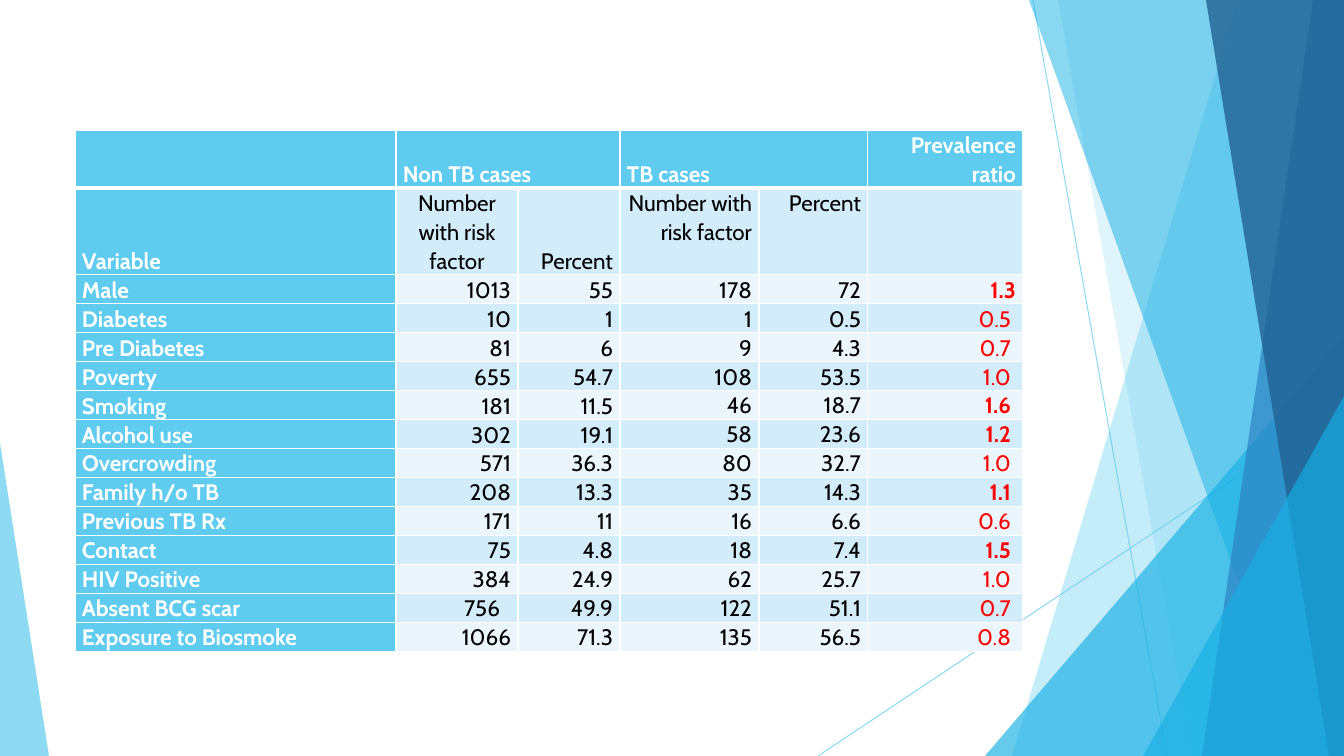
"""Build the slide with the table of TB risk factors and prevalence ratios."""
import pptx
import pptx.dml.color
import pptx.enum.shapes
import pptx.enum.text
import pptx.oxml
import pptx.oxml.ns
import pptx.util

RGBColor = pptx.dml.color.RGBColor
WHITE = RGBColor(0xFF, 0xFF, 0xFF)
BLACK = RGBColor(0x00, 0x00, 0x00)
RED = RGBColor(0xFF, 0x00, 0x00)
SKY = RGBColor(0x5F, 0xCB, 0xEF)
CYAN = RGBColor(0x17, 0xB0, 0xE4)
BLUE = RGBColor(0x2E, 0x83, 0xC3)
NAVY = RGBColor(0x22, 0x62, 0x92)
BAND_DARK = RGBColor(0xD2, 0xEC, 0xF9)
BAND_LIGHT = RGBColor(0xEA, 0xF6, 0xFC)

SCALE = 914400 / 100.8
WIDTH, HEIGHT = 1344, 756
FONT = "Cabin"
LEFT = pptx.enum.text.PP_ALIGN.LEFT
CENTER = pptx.enum.text.PP_ALIGN.CENTER
RIGHT = pptx.enum.text.PP_ALIGN.RIGHT
TOP = pptx.enum.text.MSO_ANCHOR.TOP
BOTTOM = pptx.enum.text.MSO_ANCHOR.BOTTOM

COLUMNS = [321, 122, 102, 139, 109, 155]
HEADER_HEIGHT, SUBHEADER_HEIGHT, ROW_HEIGHT = 57, 86, 28
HEADERS = ["", "Non TB cases", "", "TB cases", "", "Prevalence ratio"]
SUBHEADERS = ["Variable", "Number with risk factor", "Percent",
              "Number with risk factor", "Percent", ""]
ROWS = [
    ["Male", "1013", "55", "178", "72", "1.3"],
    ["Diabetes", "10", "1", "1", "0.5", "0.5"],
    ["Pre Diabetes", "81", "6", "9", "4.3", "0.7"],
    ["Poverty", "655", "54.7", "108", "53.5", "1.0"],
    ["Smoking", "181", "11.5", "46", "18.7", "1.6"],
    ["Alcohol use", "302", "19.1", "58", "23.6", "1.2"],
    ["Overcrowding", "571", "36.3", "80", "32.7", "1.0"],
    ["Family h/o TB", "208", "13.3", "35", "14.3", "1.1"],
    ["Previous TB Rx", "171", "11", "16", "6.6", "0.6"],
    ["Contact", "75", "4.8", "18", "7.4", "1.5"],
    ["HIV Positive", "384", "24.9", "62", "25.7", "1.0"],
    ["Absent BCG scar", "756", "49.9", "122", "51.1", "0.7"],
    ["Exposure to Biosmoke", "1066", "71.3", "135", "56.5", "0.8"],
]


def px(value):
    """Turn a length in px into EMU."""
    return pptx.util.Emu(round(value * SCALE))


def set_alpha(fill_parent, percent):
    """Make the solid colour inside an element partly transparent."""
    color = fill_parent.find(".//" + pptx.oxml.ns.qn("a:srgbClr"))
    color.append(pptx.oxml.parse_xml(
        f'<a:alpha {pptx.oxml.ns.nsdecls("a")} val="{percent * 1000}"/>'))


def paint(shape, color, alpha):
    """Give a shape a translucent fill, no outline and no shadow."""
    shape.shadow.inherit = False
    shape.fill.solid()
    shape.fill.fore_color.rgb = color
    set_alpha(shape._element.spPr, alpha)
    shape.line.fill.background()


def add_line(s, x1, y1, x2, y2):
    """Draw a thin translucent line."""
    line = s.shapes.add_connector(
        pptx.enum.shapes.MSO_CONNECTOR.STRAIGHT, px(x1), px(y1), px(x2), px(y2))
    line.line.color.rgb = SKY
    line.line.width = pptx.util.Pt(0.75)
    spPr = line._element.spPr
    set_alpha(spPr, 70)
    spPr.append(pptx.oxml.parse_xml(
        f'<a:effectLst {pptx.oxml.ns.nsdecls("a")}/>'))


def add_panel(s, top_x, bottom_x, color, alpha):
    """Draw a full-height panel with a slanted left side."""
    builder = s.shapes.build_freeform(px(top_x), 0)
    builder.add_line_segments([(px(WIDTH), 0), (px(WIDTH), px(HEIGHT)),
                               (px(bottom_x), px(HEIGHT))], close=True)
    paint(builder.convert_to_shape(), color, alpha)


def add_triangle(s, x, y, w, apex, color, alpha):
    """Draw a triangle that stands on the bottom edge of the slide."""
    sp = s.shapes.add_shape(pptx.enum.shapes.MSO_SHAPE.ISOSCELES_TRIANGLE,
                            px(x), px(y), px(w), px(HEIGHT - y))
    sp.adjustments[0] = apex
    paint(sp, color, alpha)


def add_backdrop(s):
    """Draw the facets on both sides of the slide."""
    add_line(s, 1033, 0, 1167, HEIGHT)
    add_line(s, WIDTH, 406, 818, HEIGHT)
    add_panel(s, 1238, 1012, SKY, 36)
    add_panel(s, 1058, 1192, SKY, 20)
    add_triangle(s, 985, 336, 359, 1, CYAN, 66)
    add_panel(s, 1029, 1301, CYAN, 50)
    add_panel(s, 1313, 1202, BLUE, 70)
    add_panel(s, 1206, 1329, NAVY, 80)
    add_triangle(s, 1143, 396, 201, 1, CYAN, 66)
    add_triangle(s, 0, 443, 49, 0, SKY, 70)


def style_cell(cell, fill, top=1, bottom=1):
    """Set the white borders and the fill of a cell."""
    tcPr = cell._tc.get_or_add_tcPr()
    for side, width in (("L", 1), ("R", 1), ("T", top), ("B", bottom)):
        tcPr.append(pptx.oxml.parse_xml(
            f'<a:ln{side} {pptx.oxml.ns.nsdecls("a")} w="{width * 12700}">'
            f'<a:solidFill><a:srgbClr val="{WHITE}"/></a:solidFill></a:ln{side}>'))
    cell.fill.solid()
    cell.fill.fore_color.rgb = fill


def write(cell, text, color=BLACK, bold=False, align=RIGHT, anchor=BOTTOM, right=7):
    """Write formatted text in a cell."""
    cell.margin_left, cell.margin_right = px(7), px(right)
    cell.margin_top = cell.margin_bottom = 0
    cell.vertical_anchor = anchor
    p = cell.text_frame.paragraphs[0]
    p.alignment = align
    p.line_spacing = 1.07
    p.font.size = pptx.util.Pt(16)
    if text:
        r = p.add_run()
        r.text = text
        r.font.name = FONT
        r.font.size = pptx.util.Pt(16)
        r.font.bold = bold
        r.font.color.rgb = color


def fill_headers(table):
    """Fill the two heading rows."""
    for first in (1, 3):
        table.cell(0, first).merge(table.cell(0, first + 1))
    for col, (header, subheader) in enumerate(zip(HEADERS, SUBHEADERS)):
        head, sub = table.cell(0, col), table.cell(1, col)
        style_cell(head, SKY, bottom=3)
        write(head, header, color=WHITE, bold=True, align=RIGHT if col == 5 else LEFT)
        style_cell(sub, BAND_DARK if col else SKY, top=3)
        if col == 0:
            write(sub, subheader, color=WHITE, bold=True, align=LEFT)
        else:
            write(sub, subheader, align=CENTER if col == 1 else RIGHT,
                  anchor=TOP if col >= 3 else BOTTOM)


def fill_row(table, index, values):
    """Fill one risk factor row, with ratios above 1.0 in bold."""
    band = BAND_DARK if index % 2 else BAND_LIGHT
    for col, value in enumerate(values):
        cell = table.cell(index, col)
        style_cell(cell, band if col else SKY)
        if col == 0:
            write(cell, value, color=WHITE, bold=True, align=LEFT)
        elif col == 5:
            write(cell, value, color=RED, bold=float(value) > 1, anchor=TOP,
                  right=7 if values[0] == "Male" else 12)
        else:
            write(cell, value, anchor=TOP if col >= 3 else BOTTOM,
                  right=18 if value == "756" else 7)


def add_risk_table(s):
    """Add the table of risk factors."""
    heights = [HEADER_HEIGHT, SUBHEADER_HEIGHT] + [ROW_HEIGHT] * len(ROWS)
    table = s.shapes.add_table(len(heights), len(COLUMNS), px(75), px(130),
                               px(sum(COLUMNS)), px(sum(heights))).table
    for column, width in zip(table.columns, COLUMNS):
        column.width = px(width)
    for row, height in zip(table.rows, heights):
        row.height = px(height)
    fill_headers(table)
    for index, values in enumerate(ROWS, start=2):
        fill_row(table, index, values)


def main():
    """Build and save the presentation."""
    prs = pptx.Presentation()
    prs.slide_width, prs.slide_height = px(WIDTH), px(HEIGHT)
    s = prs.slides.add_slide(prs.slide_layouts[6])
    add_backdrop(s)
    add_risk_table(s)
    prs.save("out.pptx")


if __name__ == "__main__":
    main()
